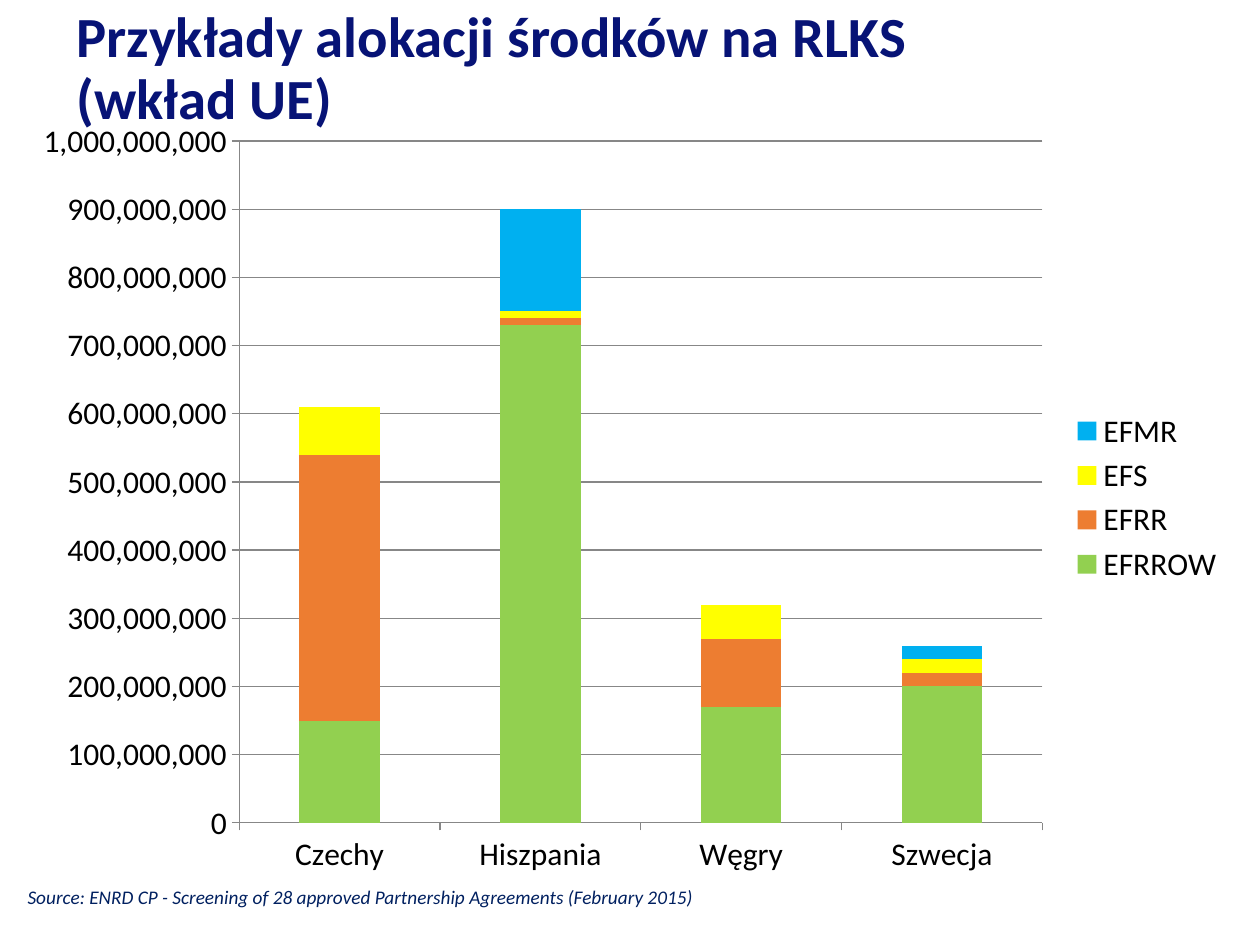
from dataclasses import dataclass

from lxml import etree
from pptx import Presentation
from pptx import util as u
from pptx.chart.data import CategoryChartData
from pptx.dml.color import RGBColor
from pptx.enum import chart as charts, text
from pptx.oxml.ns import qn


@dataclass(frozen=True)
class Theme:
    font: str = "Calibri"
    heading: str = "071376"
    source: str = "002060"
    label: str = "000000"
    grid: str = "878787"
    heading_size: float = 32.4
    label_size: float = 18
    source_size: float = 11


class SlideBuilder:
    def __init__(self, slide, theme):
        self.slide = slide
        self.theme = theme

    def style(self, font, size, color, bold=False, italic=False):
        font.name, font.size = self.theme.font, u.Pt(size)
        font.bold, font.italic = bold, italic
        font.color.rgb = RGBColor.from_string(color)

    def text(self, box, words, size, color, spacing=1.0, **emphasis):
        frame = self.slide.shapes.add_textbox(*map(u.Inches, box)).text_frame
        frame.word_wrap = True
        frame.vertical_anchor = text.MSO_ANCHOR.TOP
        frame.text = words
        paragraph = frame.paragraphs[0]
        paragraph.line_spacing = spacing
        self.style(paragraph.runs[0].font, size, color, **emphasis)

    def axis_line(self, line):
        line.color.rgb = RGBColor.from_string(self.theme.grid)
        line.width = u.Pt(0.75)

    def place_plot(self, chart, **fractions):
        """Fix the inner plot area as fractions of the chart frame."""
        area = chart._chartSpace.chart.plotArea
        for old in area.findall(qn("c:layout")):
            area.remove(old)
        layout = etree.Element(qn("c:layout"))
        manual = etree.SubElement(layout, qn("c:manualLayout"))
        settings = {"layoutTarget": "inner", "xMode": "edge", "yMode": "edge", **fractions}
        for tag, value in settings.items():
            etree.SubElement(manual, qn(f"c:{tag}")).set("val", str(value))
        area.insert(0, layout)

    def stacked_columns(self, box, countries, funds):
        data = CategoryChartData(number_format="#,##0")
        data.categories = countries
        for fund, _, millions in funds:
            data.add_series(fund, [value * 1_000_000 for value in millions])
        chart = self.slide.shapes.add_chart(
            charts.XL_CHART_TYPE.COLUMN_STACKED, *map(u.Inches, box), data).chart
        chart.has_title = False
        self.style(chart.font, self.theme.label_size, self.theme.label)

        # Columns
        plot = chart.plots[0]
        plot.gap_width, plot.overlap = 150, 100
        plot.vary_by_categories = False
        for series, (_, color, _) in zip(plot.series, funds):
            series.format.fill.solid()
            series.format.fill.fore_color.rgb = RGBColor.from_string(color)

        # Axes
        amounts = chart.value_axis
        amounts.minimum_scale, amounts.maximum_scale = 0, 1_000_000_000
        amounts.major_unit = 100_000_000
        amounts.tick_labels.number_format = "#,##0"
        amounts.tick_labels.number_format_is_linked = False
        amounts.has_major_gridlines = True
        self.axis_line(amounts.major_gridlines.format.line)
        for axis in (amounts, chart.category_axis):
            axis.major_tick_mark = charts.XL_TICK_MARK.OUTSIDE
            axis.minor_tick_mark = charts.XL_TICK_MARK.NONE
            self.axis_line(axis.format.line)

        # Legend
        chart.has_legend = True
        chart.legend.position = charts.XL_LEGEND_POSITION.RIGHT
        chart.legend.include_in_layout = False
        self.place_plot(chart, x=0.18, y=0.045, w=0.66, h=0.87)


def main():
    theme = Theme()
    deck = Presentation()
    deck.slide_width, deck.slide_height = u.Inches(10), u.Inches(7.5)
    builder = SlideBuilder(deck.slides.add_slide(deck.slide_layouts[6]), theme)

    # Heading
    builder.text((0.51, 0.02, 7.35, 0.72), "Przykłady alokacji środków na RLKS (wkład UE)",
                 theme.heading_size, theme.heading, spacing=0.9, bold=True)

    # Allocations per fund, in millions
    countries = ["Czechy", "Hiszpania", "Węgry", "Szwecja"]
    funds = [
        ("EFRROW", "92D050", (150, 730, 170, 200)),
        ("EFRR", "ED7D31", (390, 10, 100, 20)),
        ("EFS", "FFFF00", (70, 10, 50, 20)),
        ("EFMR", "00B0F0", (0, 150, 0, 20)),
    ]
    builder.stacked_columns((0.16, 0.84, 9.66, 6.22), countries, funds)

    # Source line
    builder.text((0.12, 6.98, 6.22, 0.29),
                 "Source: ENRD CP - Screening of 28 approved Partnership Agreements (February 2015)",
                 theme.source_size, theme.source, italic=True)

    deck.save("out.pptx")


if __name__ == "__main__":
    main()
